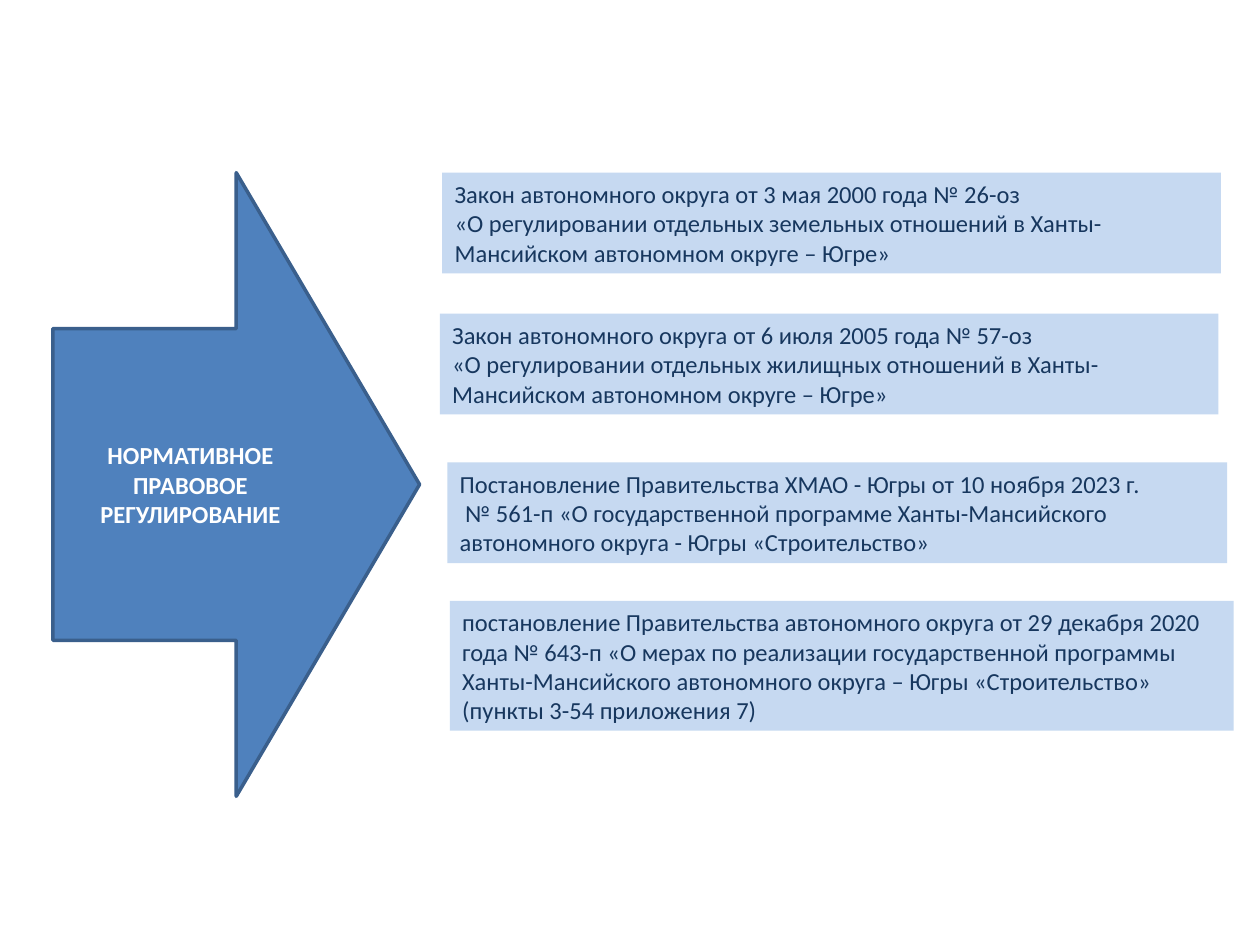
"""Build a slide on legal regulation: an arrow and four acts."""
from pptx import Presentation
from pptx.dml.color import RGBColor
from pptx.enum.shapes import MSO_SHAPE
from pptx.enum.text import MSO_ANCHOR, PP_ALIGN
from pptx.util import Inches, Pt

RECT, ARROW = MSO_SHAPE.RECTANGLE, MSO_SHAPE.RIGHT_ARROW
TOP, MIDDLE = MSO_ANCHOR.TOP, MSO_ANCHOR.MIDDLE
LEFT, CENTER = PP_ALIGN.LEFT, PP_ALIGN.CENTER
PALE = RGBColor(0xC6, 0xD9, 0xF1)
NAVY = RGBColor(0x17, 0x37, 0x5E)
BLUE = RGBColor(0x4F, 0x81, 0xBD)
EDGE = RGBColor(0x3A, 0x5F, 0x8C)
WHITE = RGBColor(0xFF, 0xFF, 0xFF)

TITLE = [["НОРМАТИВНОЕ ПРАВОВОЕ РЕГУЛИРОВАНИЕ"]]
ACTS = [
    ((3.51, 1.37, 6.18, 0.8), [[
        "Закон автономного округа от 3 мая 2000 года № 26-оз ",
        "«О регулировании отдельных земельных отношений в "
        "Ханты-Мансийском автономном округе – Югре»"]]),
    ((3.49, 2.49, 6.18, 0.8), [[
        "Закон автономного округа от 6 июля 2005 года № 57-оз ",
        "«О регулировании отдельных жилищных отношений в "
        "Ханты-Мансийском автономном округе – Югре»"]]),
    ((3.55, 3.67, 6.19, 0.8), [[
        "Постановление Правительства ХМАО - Югры от 10 ноября 2023 г.",
        " № 561-п «О государственной программе Ханты-Мансийского "
        "автономного округа - Югры «Строительство»"]]),
    ((3.57, 4.77, 6.22, 1.03), [
        ["постановление Правительства автономного округа от 29 декабря "
         "2020 года № 643-п «О мерах по реализации государственной "
         "программы Ханты-Мансийского автономного округа – Югры "
         "«Строительство»"],
        ["(пункты 3-54 приложения 7)"]]),
]


def add_block(slide, kind, box, paras, fill, color, anchor, align, bold=False):
    """Add a filled shape whose paragraphs are lists of lines."""
    shape = slide.shapes.add_shape(kind, *map(Inches, box))
    shape.shadow.inherit = False
    shape.fill.solid()
    shape.fill.fore_color.rgb = fill
    shape.line.fill.background()
    frame = shape.text_frame
    frame.word_wrap = True
    frame.vertical_anchor = anchor
    for i, lines in enumerate(paras):
        para = frame.add_paragraph() if i else frame.paragraphs[0]
        para.alignment = align
        for j, line in enumerate(lines):
            if j:
                para.add_line_break()
            run = para.add_run()
            run.text = line
            font = run.font
            font.name, font.size, font.bold = "Calibri", Pt(14), bold
            font.color.rgb = color
    return shape


def main():
    """Lay out the slide and save it."""
    deck = Presentation()
    deck.slide_width, deck.slide_height = Inches(10), Inches(7.5)
    slide = deck.slides.add_slide(deck.slide_layouts[6])
    arrow = add_block(slide, ARROW, (0.42, 1.37, 2.91, 4.95), TITLE,
                      BLUE, WHITE, MIDDLE, CENTER, True)
    arrow.line.color.rgb = EDGE
    arrow.line.width = Pt(2)
    for box, paras in ACTS:
        add_block(slide, RECT, box, paras, PALE, NAVY, TOP, LEFT)
    deck.save("out.pptx")


if __name__ == "__main__":
    main()
